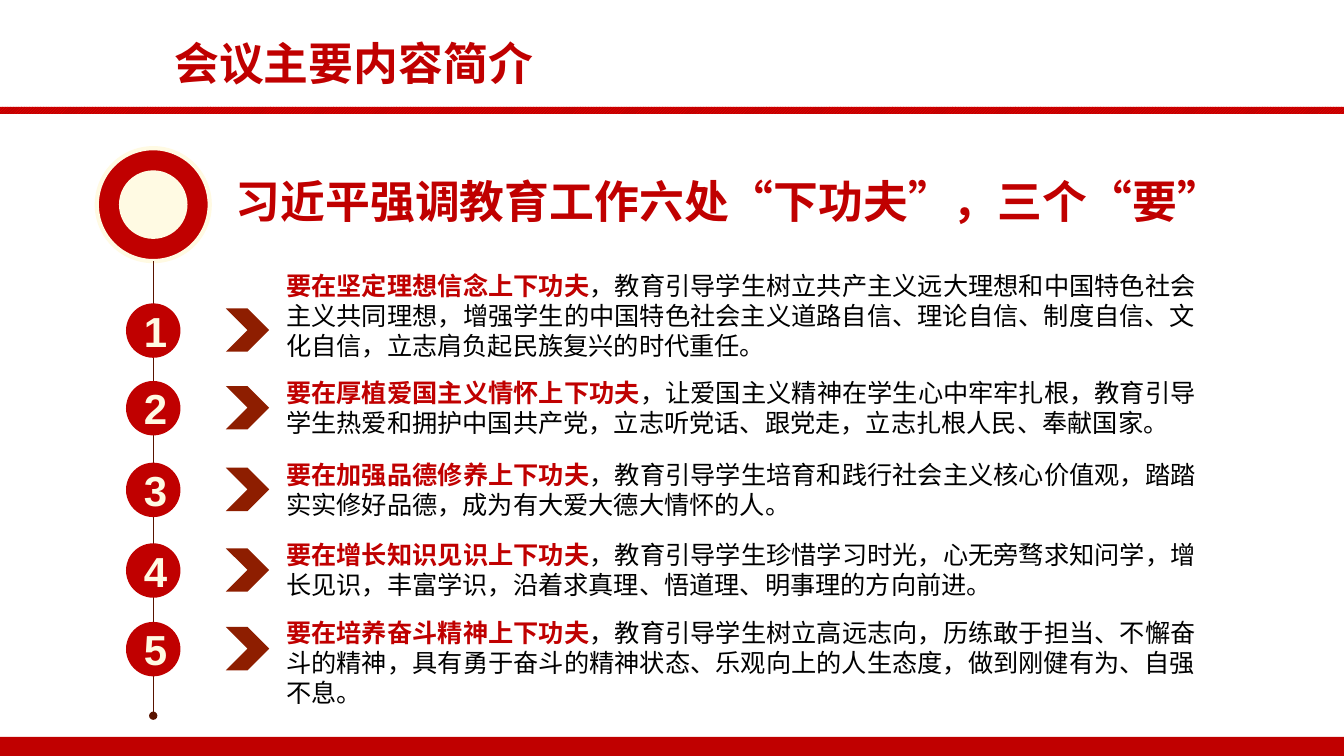
from lxml.etree import SubElement
from pptx import Presentation
from pptx.dml.color import RGBColor
from pptx.enum.dml import MSO_PATTERN
from pptx.enum.lang import MSO_LANGUAGE_ID as Language
from pptx.enum.shapes import MSO_CONNECTOR, MSO_SHAPE as Shape
from pptx.enum.text import MSO_ANCHOR as Anchor, PP_ALIGN as Align
from pptx.oxml.ns import qn
from pptx.util import Inches, Pt

RED = RGBColor(0xC0, 0x00, 0x00)
BRIGHT_RED = RGBColor(0xFF, 0x00, 0x00)
CREAM = RGBColor(0xFF, 0xFA, 0xE3)
BROWN = RGBColor(0x8E, 0x1E, 0x00)
DARK_BROWN = RGBColor(0x59, 0x13, 0x00)
BLACK = RGBColor(0x00, 0x00, 0x00)

LATIN_FONT = "Arial"
CHINESE_FONT = "Noto Sans CJK SC"
LINE_HEIGHT = 1.2

TITLE = "会议主要内容简介"
HEADING = "习近平强调教育工作六处“下功夫”，三个“要”"

# Top of the number, top of the text, text height, key phrase, explanation
POINTS = [
    (3.01, 2.63, 1.01, "要在坚定理想信念上下功夫",
     "，教育引导学生树立共产主义远大理想和中国特色社会主义共同理想，"
     "增强学生的中国特色社会主义道路自信、理论自信、制度自信、文化自信，"
     "立志肩负起民族复兴的时代重任。"),
    (3.78, 3.69, 0.71, "要在厚植爱国主义情怀上下功夫",
     "，让爱国主义精神在学生心中牢牢扎根，教育引导学生热爱和拥护中国共产党，"
     "立志听党话、跟党走，立志扎根人民、奉献国家。"),
    (4.59, 4.51, 0.71, "要在加强品德修养上下功夫",
     "，教育引导学生培育和践行社会主义核心价值观，踏踏实实修好品德，"
     "成为有大爱大德大情怀的人。"),
    (5.39, 5.3, 0.71, "要在增长知识见识上下功夫",
     "，教育引导学生珍惜学习时光，心无旁骛求知问学，增长见识，丰富学识，"
     "沿着求真理、悟道理、明事理的方向前进。"),
    (6.17, 6.07, 1.01, "要在培养奋斗精神上下功夫",
     "，教育引导学生树立高远志向，历练敢于担当、不懈奋斗的精神，"
     "具有勇于奋斗的精神状态、乐观向上的人生态度，做到刚健有为、自强不息。"),
]


def add_filled_shape(page, kind, left, top, width, height, color):
    shape = page.shapes.add_shape(
        kind, Inches(left), Inches(top), Inches(width), Inches(height))
    shape.shadow.inherit = False
    shape.fill.solid()
    shape.fill.fore_color.rgb = color
    shape.line.fill.background()
    return shape


def add_disc(page, left, top, size, color):
    disc = add_filled_shape(
        page, Shape.ROUNDED_RECTANGLE, left, top, size, size, color)
    disc.adjustments[0] = 0.5
    return disc


def add_span(para, text, size, color, bold, latin=LATIN_FONT):
    span = para.add_run()
    span.text = text
    font = span.font
    font.name, font.size, font.bold = latin, Pt(size), bold
    font.color.rgb = color
    font.language_id = Language.SIMPLIFIED_CHINESE
    SubElement(span._r.rPr, qn("a:ea")).set("typeface", CHINESE_FONT)


def add_text(page, left, top, width, height, size, spans, align=Align.LEFT,
             latin=LATIN_FONT):
    """Add one paragraph made of (text, colour, bold) spans."""
    box = page.shapes.add_textbox(
        Inches(left), Inches(top), Inches(width), Inches(height))
    box.text_frame.word_wrap = True
    para = box.text_frame.paragraphs[0]
    para.alignment = align
    para.line_spacing = Pt(size * LINE_HEIGHT)
    for text, color, bold in spans:
        add_span(para, text, size, color, bold, latin)


def add_bands(page):
    add_filled_shape(page, Shape.RECTANGLE, 0, 7.31, 13.33, 0.19, RED)
    band = add_filled_shape(page, Shape.RECTANGLE, 0, 1.06, 13.33, 0.07, RED)
    band.fill.patterned()
    band.fill.pattern = MSO_PATTERN.DARK_UPWARD_DIAGONAL
    band.fill.fore_color.rgb = BRIGHT_RED
    band.fill.back_color.rgb = RED


def add_badge(page):
    badge = add_disc(page, 0.96, 1.47, 1.12, RED)
    badge.line.color.rgb = CREAM
    badge.line.width = Pt(3)
    add_filled_shape(page, Shape.OVAL, 1.18, 1.69, 0.68, 0.68, CREAM)
    return badge


def add_timeline(page, badge):
    """Run a thin line from the badge down to a round end."""
    timeline = page.shapes.add_connector(
        MSO_CONNECTOR.STRAIGHT,
        Inches(1.52), Inches(2.59), Inches(1.52), Inches(7.1))
    timeline.begin_connect(badge, 2)
    timeline.line.color.rgb = DARK_BROWN
    timeline.line.width = Pt(0.5)
    SubElement(timeline.line._get_or_add_ln(), qn("a:tailEnd")).set("type", "oval")
    SubElement(timeline._element.spPr, qn("a:effectLst"))


def add_number(page, number, top):
    disc = add_disc(page, 1.25, top, 0.54, RED)
    frame = disc.text_frame
    frame.vertical_anchor = Anchor.MIDDLE
    para = frame.paragraphs[0]
    para.alignment = Align.CENTER
    add_span(para, str(number), 30, CREAM, True)


def add_point(page, number, point):
    number_top, text_top, text_height, phrase, explanation = point
    add_number(page, number, number_top)
    add_filled_shape(
        page, Shape.CHEVRON, 2.24, number_top + 0.05, 0.43, 0.43, BROWN)
    add_text(page, 2.74, text_top, 9.22, text_height, 18,
             [(phrase, RED, True), (explanation, BLACK, False)], Align.JUSTIFY)


def main():
    deck = Presentation()
    deck.slide_width, deck.slide_height = Inches(13.33), Inches(7.5)
    page = deck.slides.add_slide(deck.slide_layouts[6])
    add_bands(page)
    add_text(page, 1.63, 0.31, 6.77, 0.64, 32, [(TITLE, RED, True)],
             latin=CHINESE_FONT)
    add_text(page, 2.24, 1.67, 10, 0.64, 32, [(HEADING, RED, True)])
    add_timeline(page, add_badge(page))
    for number, point in enumerate(POINTS, 1):
        add_point(page, number, point)
    deck.save("out.pptx")


if __name__ == "__main__":
    main()
